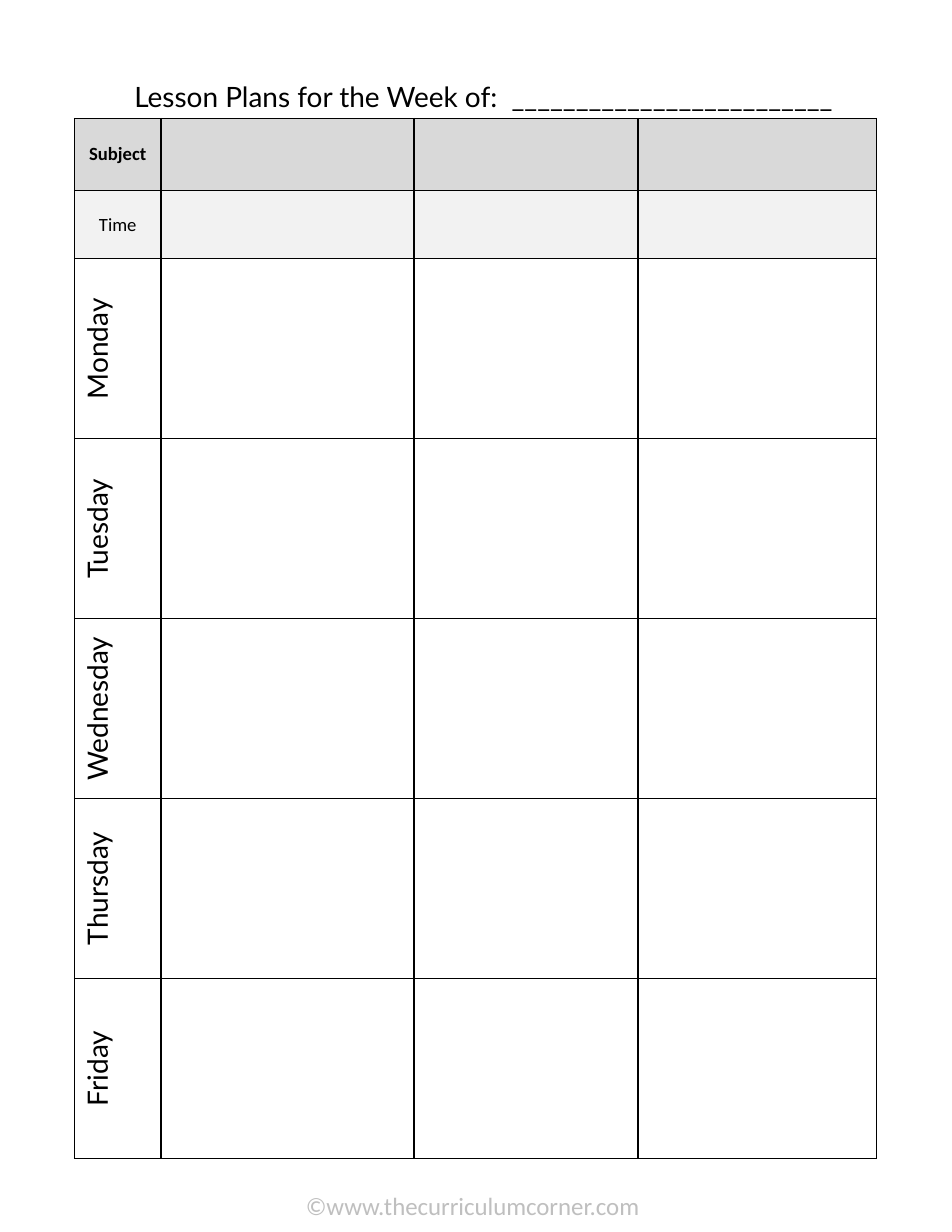
from lxml import etree
from pptx import Presentation
from pptx import util as u
from pptx.dml.color import RGBColor
from pptx.enum import text
from pptx.oxml import ns

COLORS = {
    "ink": "000000",
    "subject": "D9D9D9",
    "time": "F2F2F2",
    "day": "FFFFFF",
    "footer": "BFBFBF",
}
DAYS = ["Monday", "Tuesday", "Wednesday", "Thursday", "Friday"]
COLUMN_WIDTHS = [1.96, 5.74, 5.08, 5.41]
SUBJECT_HEIGHT, TIME_HEIGHT, DAY_HEIGHT = 1.63, 1.55, 4.08


def format_text(tf, size, font, color="ink", bold=False):
    for p in tf.paragraphs:
        for r in p.runs:
            r.font.size = u.Pt(size)
            r.font.name = font
            r.font.bold = bold
            r.font.color.rgb = RGBColor.from_string(COLORS[color])


def add_label(s, words, box, size, font, color="ink", wrap=True):
    tf = s.shapes.add_textbox(*(u.Cm(v) for v in box)).text_frame
    tf.word_wrap = wrap
    tf.auto_size = text.MSO_AUTO_SIZE.NONE
    tf.vertical_anchor = text.MSO_ANCHOR.BOTTOM
    tf.text = words
    tf.paragraphs[0].alignment = text.PP_ALIGN.CENTER
    format_text(tf, size, font, color)


def set_borders(cell):
    """Draw a 1 pt line on all four sides; call before filling the cell."""
    tc_pr = cell._tc.get_or_add_tcPr()
    for side in ("a:lnL", "a:lnR", "a:lnT", "a:lnB"):
        line = etree.SubElement(tc_pr, ns.qn(side), w=str(u.Pt(1)))
        fill = etree.SubElement(line, ns.qn("a:solidFill"))
        etree.SubElement(fill, ns.qn("a:srgbClr"), val=COLORS["ink"])


def fill_row(row, words, height, color, size, font, bold=False, upright=True):
    row.height = u.Cm(height)
    for cell in row.cells:
        set_borders(cell)
        cell.fill.solid()
        cell.fill.fore_color.rgb = RGBColor.from_string(COLORS[color])
    heading = row.cells[0]
    heading.vertical_anchor = text.MSO_ANCHOR.MIDDLE
    heading.text_frame.text = words
    heading.text_frame.paragraphs[0].alignment = text.PP_ALIGN.CENTER
    format_text(heading.text_frame, size, font, bold=bold)
    if not upright:
        heading._tc.get_or_add_tcPr().set("vert", "vert270")


def add_planner(s):
    height = SUBJECT_HEIGHT + TIME_HEIGHT + DAY_HEIGHT * len(DAYS)
    table = s.shapes.add_table(
        2 + len(DAYS), len(COLUMN_WIDTHS),
        u.Cm(1.69), u.Cm(2.69), u.Cm(sum(COLUMN_WIDTHS)), u.Cm(height),
    ).table
    table.first_row = table.horz_banding = False
    for column, width in zip(table.columns, COLUMN_WIDTHS):
        column.width = u.Cm(width)

    subject, time, *day_rows = table.rows
    fill_row(subject, "Subject", SUBJECT_HEIGHT, "subject", 12, "Calibri", bold=True)
    fill_row(time, "Time", TIME_HEIGHT, "time", 12, "Calibri")
    for row, day in zip(day_rows, DAYS):
        fill_row(row, day, DAY_HEIGHT, "day", 18, "Lato", upright=False)


def main():
    prs = Presentation()
    prs.slide_width, prs.slide_height = u.Cm(21.59), u.Cm(27.94)
    s = prs.slides.add_slide(prs.slide_layouts[6])
    add_label(s, "©www.thecurriculumcorner.com", (6.63, 26.87, 8.18, 0.94),
              16, "Calibri", "footer", wrap=False)
    add_label(s, "Lesson Plans for the Week of:  " + "_" * 25,
              (2.36, 1.07, 17.22, 1.63), 18, "Lato")
    add_planner(s)
    prs.save("out.pptx")


if __name__ == "__main__":
    main()
